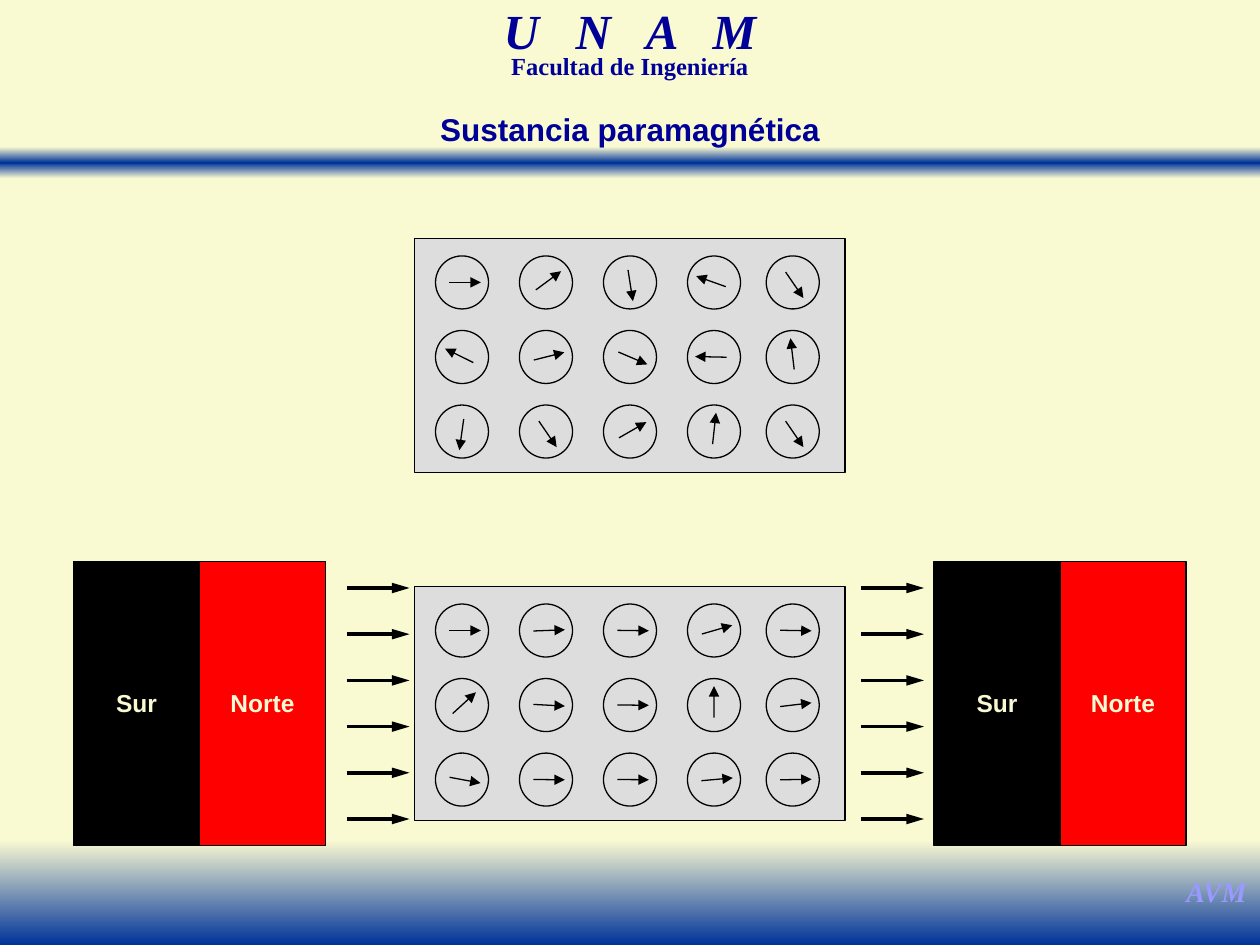
"""Build the slide comparing a paramagnetic substance with and without a magnetic field."""
from dataclasses import dataclass
from math import cos, radians, sin

from pptx import Presentation
from pptx.dml.color import RGBColor
from pptx.enum.shapes import MSO_CONNECTOR, MSO_SHAPE
from pptx.enum.text import MSO_AUTO_SIZE, PP_ALIGN
from pptx.oxml import parse_xml
from pptx.oxml.ns import nsdecls, qn
from pptx.util import Inches, Pt

RECTANGLE, OVAL = MSO_SHAPE.RECTANGLE, MSO_SHAPE.OVAL
STRAIGHT = MSO_CONNECTOR.STRAIGHT
CENTER = PP_ALIGN.CENTER
FIT_TEXT = MSO_AUTO_SIZE.SHAPE_TO_FIT_TEXT

CREAM = RGBColor(0xFA, 0xFA, 0xD2)
BLUE = RGBColor(0x00, 0x33, 0x99)
NAVY = RGBColor(0x00, 0x00, 0x99)
LILAC = RGBColor(0x99, 0x99, 0xFF)
GRAY = RGBColor(0xDD, 0xDD, 0xDD)
BLACK = RGBColor(0x00, 0x00, 0x00)
RED = RGBColor(0xFF, 0x00, 0x00)

GRID_COLUMNS, GRID_ROWS = 120, 90
CELL = Inches(10) / GRID_COLUMNS

PANEL_LEFT, PANEL_WIDTH, PANEL_HEIGHT = 39.5, 41, 22.3
ATOM_COLUMNS = (44, 52, 60, 68, 75.5)
ATOM_SIZE, ATOM_MARGIN, ATOM_PITCH = 5.05, 4.2, 7.1
MOMENT_TAIL, MOMENT_HEAD = 1.2, 1.8
MAGNET_TOP, POLE_WIDTH, POLE_HEIGHT = 53.5, 12, 27
FIELD_TOP, FIELD_PITCH, FIELD_LENGTH, FIELD_LINES = 56, 4.4, 6, 6


@dataclass(frozen=True)
class Box:
    """A rectangle in grid columns and rows."""
    left: float
    top: float
    width: float
    height: float

    def lengths(self) -> list[int]:
        """Return the box in slide units."""
        return [round(value * CELL) for value in (self.left, self.top, self.width, self.height)]


@dataclass(frozen=True)
class Label:
    """A one-line text whose runs carry their letter spacing in points."""
    box: Box
    runs: tuple[tuple[str, float], ...]
    font: str
    size: int
    color: RGBColor
    italic: bool = False
    wrap: bool = True
    line_spacing: float = 1.0
    inset: bool = True


@dataclass(frozen=True)
class Panel:
    """A sample with the clockwise angles of its magnetic moments, by rows."""
    top: float
    angles: tuple[tuple[float, ...], ...]


@dataclass(frozen=True)
class Pole:
    """One half of a magnet."""
    name: str
    color: RGBColor
    label_width: float


SERIF, SANS = "Times New Roman", "Arial"
LABELS = (
    Label(Box(36.5, 1, 47, 5.1), (("U N A ", 7), ("M", 0)), SERIF, 28, NAVY, True, line_spacing=0.7),
    Label(Box(38.5, 5, 43, 3.1), (("Facultad de Ingeniería", 0),), SERIF, 14, NAVY, line_spacing=0.7),
    Label(Box(111.7, 82.7, 8.3, 4.4), (("AVM", 0),), SERIF, 16, LILAC, True, wrap=False),
    Label(Box(34, 9.92, 52, 4.8), (("Sustancia paramagnética", 0),), SANS, 18, NAVY),
)
PANELS = (
    Panel(22.7, ((0, 323.5, 81, 199.6, 55.6),
                 (206.3, 345.8, 23.2, 181.2, 263.2),
                 (97.9, 55.6, 330.1, 276.2, 55.6))),
    Panel(55.85, ((0, 357.7, 0.8, 343.8, 1.1),
                  (317.6, 3, 0.7, 270.1, 353.2),
                  (10.5, 0.7, 0.5, 354.9, 359))),
)
POLES = (Pole("Sur", BLACK, 4), Pole("Norte", RED, 6.3))
MAGNET_COLUMNS = (7, 88.95)
FIELD_COLUMNS = (33, 82)


def add_filled(slide, kind, box: Box, color: RGBColor):
    """Draw an outlined shape in one colour."""
    shape = slide.shapes.add_shape(kind, *box.lengths())
    shape.shadow.inherit = False
    shape.fill.solid()
    shape.fill.fore_color.rgb = color
    shape.line.color.rgb = BLACK
    shape.line.width = Pt(0.75)
    return shape


def add_gradient_band(slide, box: Box, colors: tuple[RGBColor, ...]) -> None:
    """Draw a band shaded downwards through evenly spaced colours."""
    shape = slide.shapes.add_shape(RECTANGLE, *box.lengths())
    shape.shadow.inherit = False
    shape.line.fill.background()
    stops = "".join(
        f'<a:gs pos="{100000 * index // (len(colors) - 1)}"><a:srgbClr val="{color}"/></a:gs>'
        for index, color in enumerate(colors))
    gradient = parse_xml(f'<a:gradFill {nsdecls("a")} rotWithShape="1"><a:gsLst>{stops}</a:gsLst>'
                         '<a:lin ang="5400000" scaled="0"/></a:gradFill>')
    shape._element.spPr.find(qn("a:prstGeom")).addnext(gradient)


def add_arrow(slide, start: tuple[float, float], end: tuple[float, float],
              width: float, head_length: str) -> None:
    """Draw a black arrow between two grid points."""
    connector = slide.shapes.add_connector(
        STRAIGHT, *(round(value * CELL) for value in (*start, *end)))
    connector.line.color.rgb = BLACK
    connector.line.width = Pt(width)
    connector.line._get_or_add_ln().append(parse_xml(
        f'<a:tailEnd {nsdecls("a")} type="triangle" w="med" len="{head_length}"/>'))
    connector._element.spPr.append(parse_xml(f'<a:effectLst {nsdecls("a")}/>'))


def add_label(slide, label: Label) -> None:
    """Write a centred bold label."""
    frame = slide.shapes.add_textbox(*label.box.lengths()).text_frame
    frame.word_wrap = label.wrap
    frame.auto_size = FIT_TEXT
    if not label.inset:
        frame.margin_left = frame.margin_top = frame.margin_right = frame.margin_bottom = 0
    paragraph = frame.paragraphs[0]
    paragraph.alignment = CENTER
    paragraph.line_spacing = label.line_spacing
    for text, spacing in label.runs:
        run = paragraph.add_run()
        run.text = text
        run.font.name = label.font
        run.font.size = Pt(label.size)
        run.font.bold = True
        run.font.italic = label.italic
        run.font.color.rgb = label.color
        if spacing:
            run._r.get_or_add_rPr().set("spc", str(round(spacing * 100)))


def add_panel(slide, panel: Panel) -> None:
    """Draw a sample and its atoms with their moments."""
    add_filled(slide, RECTANGLE, Box(PANEL_LEFT, panel.top, PANEL_WIDTH, PANEL_HEIGHT), GRAY)
    radius = ATOM_SIZE / 2
    for row, angles in enumerate(panel.angles):
        y = panel.top + ATOM_MARGIN + row * ATOM_PITCH
        for x, angle in zip(ATOM_COLUMNS, angles):
            atom = add_filled(slide, OVAL, Box(x - radius, y - radius, ATOM_SIZE, ATOM_SIZE), GRAY)
            atom.rotation = angle
            across, down = cos(radians(angle)), sin(radians(angle))
            add_arrow(slide, (x - MOMENT_TAIL * across, y - MOMENT_TAIL * down),
                      (x + MOMENT_HEAD * across, y + MOMENT_HEAD * down), 0.75, "med")


def add_magnet(slide, left: float) -> None:
    """Draw a magnet with its two named poles."""
    for index, pole in enumerate(POLES):
        box = Box(left + index * POLE_WIDTH, MAGNET_TOP, POLE_WIDTH, POLE_HEIGHT)
        add_filled(slide, RECTANGLE, box, pole.color)
        label_box = Box(box.left + (POLE_WIDTH - pole.label_width) / 2, 65.5, pole.label_width, 2.9)
        add_label(slide, Label(label_box, ((pole.name, 0),), SANS, 14, CREAM, wrap=False, inset=False))


def add_field(slide, left: float) -> None:
    """Draw a column of parallel field arrows."""
    for index in range(FIELD_LINES):
        y = FIELD_TOP + index * FIELD_PITCH
        add_arrow(slide, (left, y), (left + FIELD_LENGTH, y), 2, "lg")


def main() -> None:
    """Build and save the presentation."""
    presentation = Presentation()
    presentation.slide_width = round(GRID_COLUMNS * CELL)
    presentation.slide_height = round(GRID_ROWS * CELL)
    slide = presentation.slides.add_slide(presentation.slide_layouts[6])
    slide.background.fill.solid()
    slide.background.fill.fore_color.rgb = CREAM
    add_gradient_band(slide, Box(0, 14, GRID_COLUMNS, 3), (CREAM, BLUE, CREAM))
    add_gradient_band(slide, Box(0, 80, GRID_COLUMNS, 10), (CREAM, BLUE))
    for left in MAGNET_COLUMNS:
        add_magnet(slide, left)
    for left in FIELD_COLUMNS:
        add_field(slide, left)
    for panel in PANELS:
        add_panel(slide, panel)
    for label in LABELS:
        add_label(slide, label)
    presentation.save("out.pptx")


if __name__ == "__main__":
    main()
